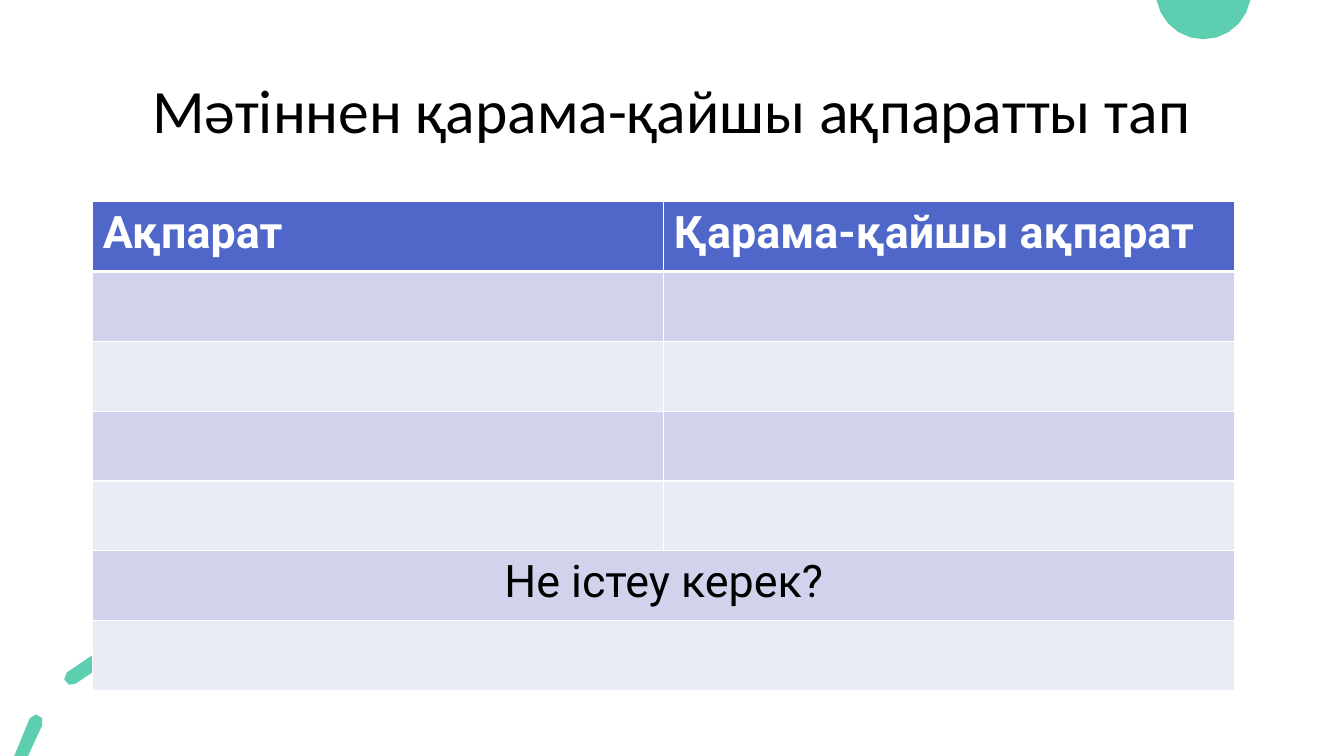
"""Build a Kazakh worksheet slide: a title over a table for contradictory information."""
import math

import pptx
import pptx.dml.color
import pptx.enum.text
import pptx.oxml
import pptx.oxml.ns
import pptx.util

Cm = pptx.util.Cm
Pt = pptx.util.Pt
ALIGN = pptx.enum.text.PP_ALIGN

COLORS = {
    "accent": "5DCEAF",
    "header": "4E67C8",
    "band_dark": "D0D3EB",
    "band_light": "E9EBF5",
    "white": "FFFFFF",
    "black": "000000",
}
SLIDE_WIDTH, SLIDE_HEIGHT = 33.87, 19.05
HEADINGS = ["Ақпарат", "Қарама-қайшы ақпарат"]
ROWS, QUESTION_ROW, ANSWER_ROW = 7, 5, 6
RING_CENTER, RING_RADIUS, DASH_HALF = (4.55, 20.22), 4.17, 0.18
DASHES = [(60.8, 74.4), (26.9, 41.3), (-7.2, 7.2)]


def rgb(name):
    """Return the named colour."""
    return pptx.dml.color.RGBColor.from_string(COLORS[name])


def arc(center, radius, start, end, steps):
    """Return points of an arc, with degrees counted from the top towards the left."""
    angles = [math.radians(start + (end - start) * i / steps) for i in range(steps + 1)]
    return [(center[0] - radius * math.sin(a), center[1] - radius * math.cos(a))
            for a in angles]


def dash_outline(start, end):
    """Return the outline of a round-ended dash on the ring."""
    start_cap, end_cap = arc(RING_CENTER, RING_RADIUS, start, end, 1)
    return (arc(RING_CENTER, RING_RADIUS + DASH_HALF, start, end, 1)
            + arc(end_cap, DASH_HALF, end, end + 180, 3)[1:-1]
            + arc(RING_CENTER, RING_RADIUS - DASH_HALF, end, start, 1)
            + arc(start_cap, DASH_HALF, start + 180, start + 360, 3)[1:-1])


def add_decoration(slide, outlines):
    """Draw closed outlines as one accent shape, cut off at the slide edges."""
    contours = [[(Cm(x), Cm(min(max(y, 0), SLIDE_HEIGHT))) for x, y in outline]
                for outline in outlines]
    builder = slide.shapes.build_freeform(*contours[0][0])
    for number, contour in enumerate(contours):
        if number:
            builder.move_to(*contour[0])
        builder.add_line_segments(contour[1:], close=True)
    decoration = builder.convert_to_shape()
    decoration.shadow.inherit = False
    decoration.fill.solid()
    decoration.fill.fore_color.rgb = rgb("accent")
    decoration.line.fill.background()


def write(frame, text, font, size, color, bold=False, align=ALIGN.LEFT):
    """Write one formatted paragraph into a text frame."""
    frame.text = text
    paragraph = frame.paragraphs[0]
    paragraph.alignment = align
    paragraph.font.name = font
    paragraph.font.size = Pt(size)
    paragraph.font.bold = bold
    paragraph.font.color.rgb = rgb(color)
    return paragraph


def add_title(slide, text):
    """Place and format the slide title."""
    title = slide.shapes.title
    title.left, title.top = Cm(2.33), Cm(1.01)
    title.width, title.height = Cm(29.21), Cm(3.68)
    title.text_frame.auto_size = pptx.enum.text.MSO_AUTO_SIZE.NONE
    title.text_frame.vertical_anchor = pptx.enum.text.MSO_ANCHOR.MIDDLE
    heading = write(title.text_frame, text, "Calibri", 44, "black", align=ALIGN.CENTER)
    heading.line_spacing = 0.9


def style_cell(cell, fill, top_width, bottom_width):
    """Fill a cell and give it white borders."""
    cell.fill.solid()
    cell.fill.fore_color.rgb = rgb(fill)
    properties = cell._tc.get_or_add_tcPr()
    widths = {"lnL": 1, "lnR": 1, "lnT": top_width, "lnB": bottom_width}
    for position, (side, width) in enumerate(widths.items()):
        border = pptx.oxml.parse_xml(
            f'<a:{side} {pptx.oxml.ns.nsdecls("a")} w="{Pt(width)}"><a:solidFill>'
            f'<a:srgbClr val="{COLORS["white"]}"/></a:solidFill></a:{side}>')
        properties.insert(position, border)


def add_worksheet(slide):
    """Add the table with its headings, empty rows and closing question."""
    worksheet = slide.shapes.add_table(
        ROWS, len(HEADINGS), Cm(2.34), Cm(5.08), Cm(28.78), Cm(1.76 * ROWS)).table
    worksheet.horz_banding = False
    for row in range(ROWS):
        worksheet.rows[row].height = Cm(1.76)
        band = "band_dark" if row % 2 else "band_light"
        for column in range(len(HEADINGS)):
            style_cell(worksheet.cell(row, column), band if row else "header",
                       3 if row == 1 else 1, 3 if row == 0 else 1)
    for column, heading in enumerate(HEADINGS):
        write(worksheet.cell(0, column).text_frame, heading, "Roboto", 32, "white", True)
    for row in (QUESTION_ROW, ANSWER_ROW):
        worksheet.cell(row, 0).merge(worksheet.cell(row, 1))
    write(worksheet.cell(QUESTION_ROW, 0).text_frame, "Не істеу керек?",
          "Roboto", 32, "black", align=ALIGN.CENTER)


def main():
    """Build and save the slide."""
    presentation = pptx.Presentation()
    presentation.slide_width = Cm(SLIDE_WIDTH)
    presentation.slide_height = Cm(SLIDE_HEIGHT)
    slide = presentation.slides.add_slide(presentation.slide_layouts.get_by_name("Title Only"))
    add_decoration(slide, [arc((30.33, -0.21), 1.2, 100, 260, 10)])
    add_decoration(slide, [dash_outline(*dash) for dash in DASHES])
    add_title(slide, "Мәтіннен қарама-қайшы ақпаратты тап")
    add_worksheet(slide)
    presentation.save("out.pptx")


if __name__ == "__main__":
    main()
